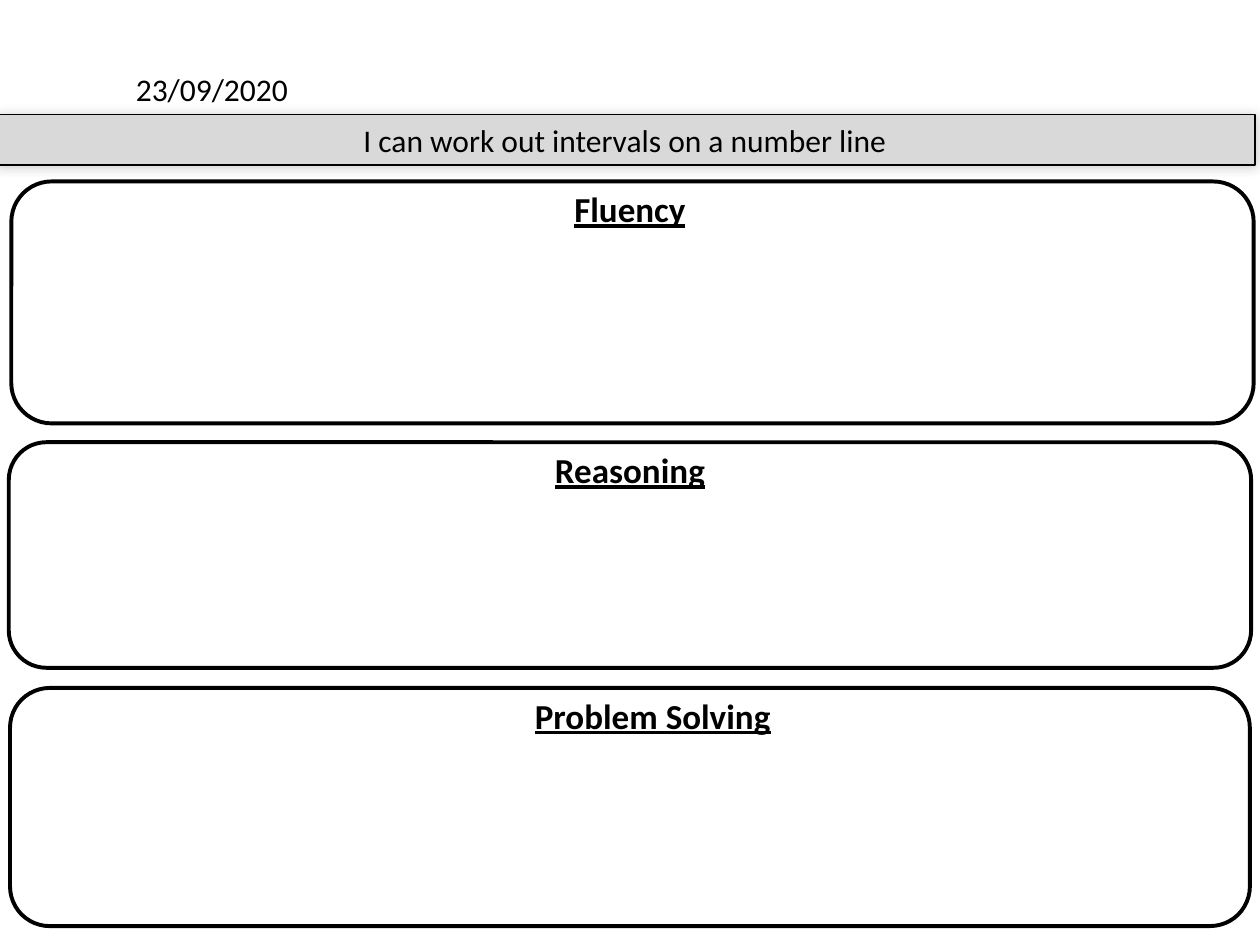
from pptx import Presentation
from pptx.dml.color import RGBColor
from pptx.enum.shapes import MSO_SHAPE as Shape
from pptx.enum.text import MSO_ANCHOR as Anchor, PP_ALIGN as Align
from pptx.oxml import parse_xml
from pptx.oxml.ns import nsdecls
from pptx.util import Inches, Pt

BLACK = RGBColor(0, 0, 0)
GREY = RGBColor(0xD9, 0xD9, 0xD9)
FONT = "Calibri"
WIDE, HIGH = 10, 7.5
HEAD = 0.44  # height of a panel heading

GLOW = f"""<a:effectLst {nsdecls('a')}>
  <a:outerShdw blurRad="{Pt(6)}" dist="0" dir="18900000" rotWithShape="0">
    <a:srgbClr val="000000"><a:alpha val="20000"/></a:srgbClr>
  </a:outerShdw>
</a:effectLst>"""


def place(shape, box):
    shape.left, shape.top, shape.width, shape.height = map(Inches, box)


def write(shape, text, size, align=Align.CENTER, bold=False, wrap=True):
    frame = shape.text_frame
    frame.word_wrap = wrap
    frame.text = text
    para = frame.paragraphs[0]
    para.alignment = align
    font = para.font
    font.name, font.size, font.bold = FONT, Pt(size), bold
    font.underline = bold
    font.color.rgb = BLACK
    return para


def outline(shape, width):
    shape.line.color.rgb = BLACK
    shape.line.width = Pt(width)


def add_date(slide, box, text):
    note = slide.shapes.add_textbox(*map(Inches, box))
    write(note, text, 18, Align.LEFT, wrap=False)


def add_goal(slide, box, text):
    goal = slide.shapes.title
    place(goal, box)
    goal.fill.solid()
    goal.fill.fore_color.rgb = GREY
    outline(goal, 0.75)
    goal._element.spPr.append(parse_xml(GLOW))
    goal.text_frame.vertical_anchor = Anchor.TOP
    write(goal, text, 18)


def add_panel(slide, box, text, mid):
    """Rounded frame with a heading centred on mid, at its top edge."""
    left, top, width, height = box
    frame = slide.shapes.add_shape(Shape.ROUNDED_RECTANGLE, *map(Inches, box))
    frame.shadow.inherit = False
    frame.fill.background()
    outline(frame, 2.25)
    span = width / 2
    head = slide.shapes.add_textbox(
        *map(Inches, (mid - span / 2, top, span, HEAD)))
    write(head, text, 20, bold=True).space_after = Pt(6)


def main():
    deck = Presentation()
    deck.slide_width, deck.slide_height = Inches(WIDE), Inches(HIGH)
    slide = deck.slides.add_slide(deck.slide_layouts[5])

    # Date and learning goal
    add_date(slide, (0.98, 0.51, 1.42, 0.4), "23/09/2020")
    add_goal(slide, (-0.04, 0.91, WIDE, 0.4),
             "I can work out intervals on a number line")

    # Three work areas
    panels = [
        ("Fluency", (0.09, 1.44, 9.86, 1.92), 5),
        ("Reasoning", (0.07, 3.51, 9.86, 1.79), 5),
        ("Problem Solving", (0.08, 5.46, 9.84, 1.89), 5.18),
    ]
    for text, box, mid in panels:
        add_panel(slide, box, text, mid)

    deck.save("out.pptx")


if __name__ == "__main__":
    main()
